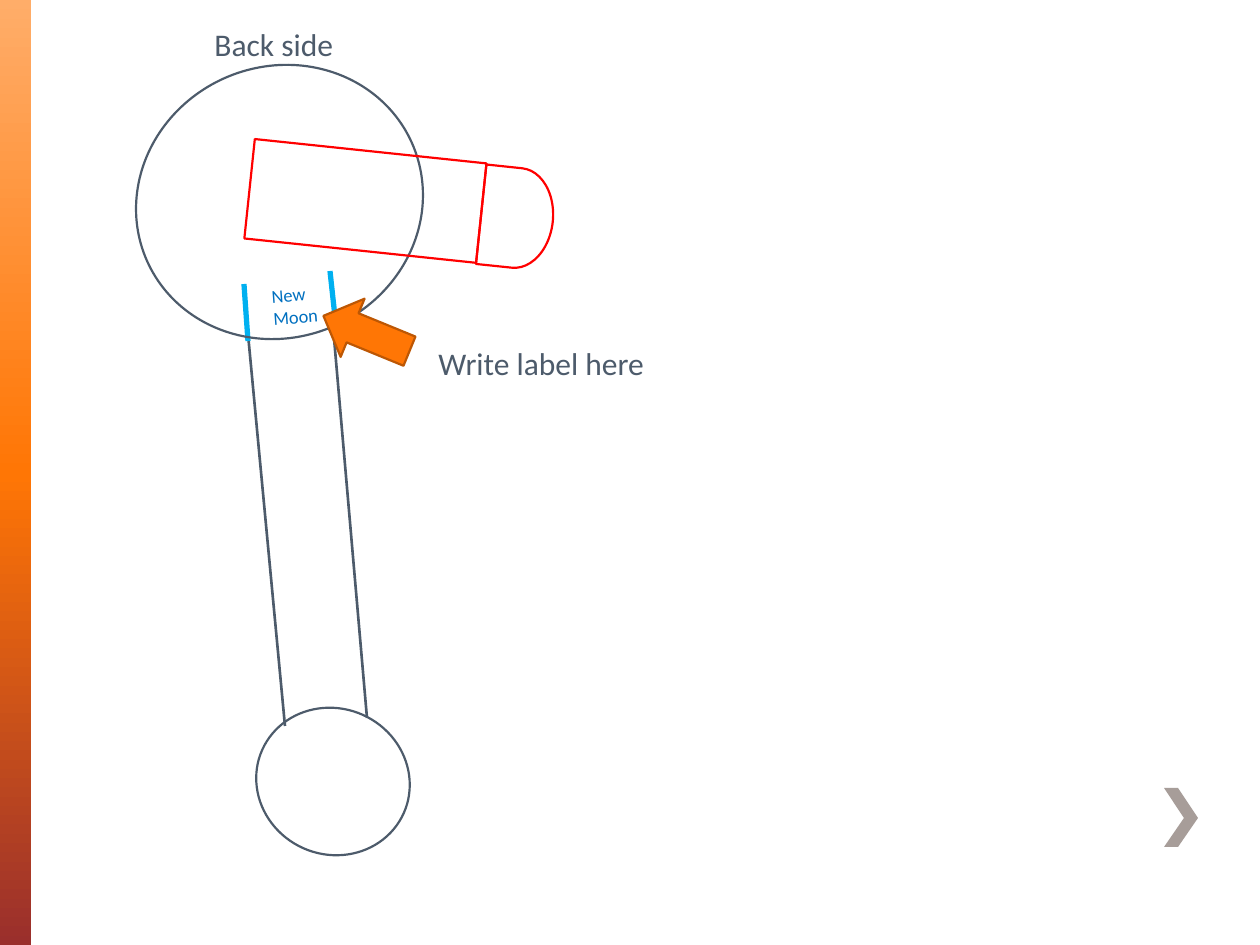
from copy import deepcopy

from lxml.etree import SubElement
from pptx import Presentation
from pptx.dml.color import RGBColor
from pptx.enum.shapes import MSO_CONNECTOR, MSO_SHAPE
from pptx.enum.text import MSO_AUTO_SIZE
from pptx.oxml.ns import qn
from pptx.util import Pt

PX = 914400 / 126
PEACH = RGBColor(0xFF, 0xAD, 0x69)
ORANGE = RGBColor(0xFF, 0x76, 0x05)
BRICK = RGBColor(0x9A, 0x2F, 0x2C)
RUST = RGBColor(0xBD, 0x57, 0x04)
TAUPE = RGBColor(0xA7, 0x9D, 0x99)
SLATE = RGBColor(0x4D, 0x5B, 0x6B)
RED = RGBColor(0xFF, 0x00, 0x00)
SKY = RGBColor(0x00, 0xB0, 0xF0)
BLUE = RGBColor(0x00, 0x70, 0xC0)


def px(*values):
    return [round(v * PX) for v in values]


def add_outlined(kind, box, rotation, color):
    s = shapes.add_shape(kind, *px(*box))
    s.rotation = rotation
    s.shadow.inherit = False
    s.fill.background()
    s.line.color.rgb = color
    s.line.width = Pt(1.25)
    return s


prs = Presentation()
prs.slide_width, prs.slide_height = px(1260, 945)
shapes = prs.slides.add_slide(prs.slide_layouts[6]).shapes

bar = shapes.add_shape(MSO_SHAPE.RECTANGLE, *px(0, 0, 31, 945))
bar.shadow.inherit = False
bar.line.fill.background()
bar.fill.gradient()
bar.fill.gradient_angle = 270
first = bar.fill._fill.gradient_stops[0]._gs
first.addnext(deepcopy(first))
for stop, position, color in zip(bar.fill.gradient_stops, (0, 0.5, 1), (PEACH, ORANGE, BRICK)):
    stop.position = position
    stop.color.rgb = color

builder = shapes.build_freeform(1178, 788, scale=PX)
builder.add_line_segments([(1164, 788), (1184, 818), (1164, 847), (1178, 847), (1198, 818)])
chevron = builder.convert_to_shape()
chevron.shadow.inherit = False
chevron.fill.solid()
chevron.fill.fore_color.rgb = TAUPE
chevron.line.fill.background()

for ends, color, width in [
    ((248, 334, 285, 726), SLATE, 1.5),
    ((333, 326, 367, 718), SLATE, 1.5),
    ((244, 284, 248, 341), SKY, 3),
    ((330, 271, 336, 326), SKY, 3),
]:
    s = shapes.add_connector(MSO_CONNECTOR.STRAIGHT, *px(*ends))
    s.line.color.rgb = color
    s.line.width = Pt(width)
    SubElement(s._element.spPr, qn("a:effectLst"))

add_outlined(MSO_SHAPE.OVAL, (260, 704, 146, 155), 294.1, SLATE)
add_outlined(MSO_SHAPE.OVAL, (144, 57, 271, 290), 65.9, SLATE)
add_outlined(MSO_SHAPE.FLOWCHART_DELAY, (481, 168, 72, 100), 6, RED)
add_outlined(MSO_SHAPE.RECTANGLE, (249, 151, 233, 100), 6, RED)

arrow = add_outlined(MSO_SHAPE.RIGHT_ARROW, (320, 302, 93, 63), 202.3, RUST)
arrow.fill.solid()
arrow.fill.fore_color.rgb = ORANGE

for box, rotation, wrap, lines, size, color in [
    ((202, 19, 145, 50), 0, False, ["Back side"], 18, SLATE),
    ((426, 338, 247, 50), 0, True, ["Write label here"], 18, SLATE),
    ((260, 277, 71, 57), 355.7, False, ["New", "Moon"], 10.5, BLUE),
]:
    s = shapes.add_textbox(*px(*box))
    s.rotation = rotation
    tf = s.text_frame
    tf.word_wrap = wrap
    tf.auto_size = MSO_AUTO_SIZE.SHAPE_TO_FIT_TEXT
    tf.text = "\n".join(lines)
    for p in tf.paragraphs:
        p.font.name = "Calibri"
        p.font.size = Pt(size)
        p.font.color.rgb = color

prs.save("out.pptx")
